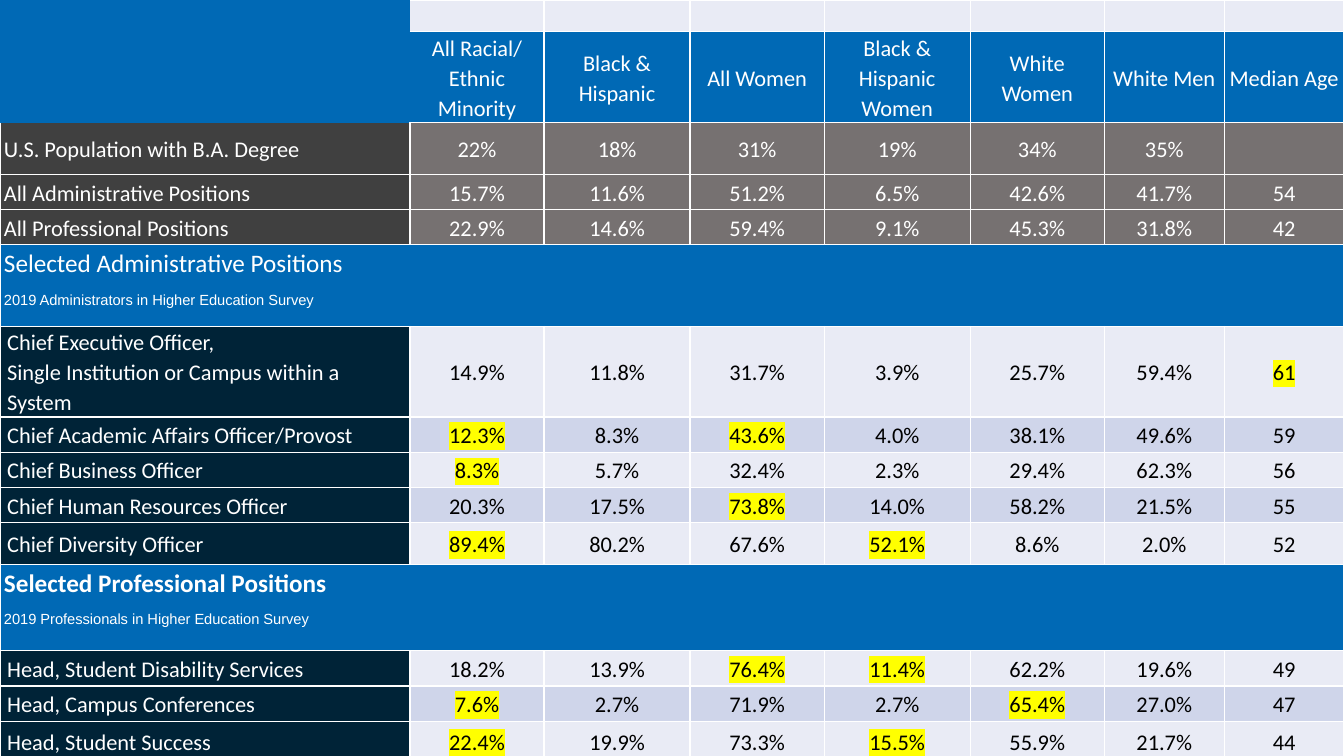
from lxml.etree import SubElement
from pptx import Presentation
from pptx.dml.color import RGBColor
from pptx.enum.text import MSO_ANCHOR, PP_ALIGN
from pptx.oxml.ns import qn
from pptx.util import Cm, Pt

WHITE, BLACK, BLUE, NAVY = "FFFFFF", "000000", "0069B5", "002337"
DARK, GREY, LIGHT, BAND, YELLOW = "404040", "767171", "E9EBF5", "CFD5EA", "FFFF00"

COLS = [10.33, 3.38, 3.68, 3.38, 3.68, 3.38, 3.02, 3.02]
HEADINGS = ["All Racial/ Ethnic Minority", "Black & Hispanic", "All Women",
            "Black & Hispanic Women", "White Women", "White Men", "Median Age"]

# A trailing * marks a highlighted value.
OVERALL = [
    (1.3, "U.S. Population with B.A. Degree", "22% 18% 31% 19% 34% 35%"),
    (0.89, "All Administrative Positions", "15.7% 11.6% 51.2% 6.5% 42.6% 41.7% 54"),
    (0.89, "All Professional Positions", "22.9% 14.6% 59.4% 9.1% 45.3% 31.8% 42"),
]
ADMINISTRATIVE = [
    (2.21, "Chief Executive Officer,\nSingle Institution or Campus within a System",
     "14.9% 11.8% 31.7% 3.9% 25.7% 59.4% 61*"),
    (0.89, "Chief Academic Affairs Officer/Provost",
     "12.3%* 8.3% 43.6%* 4.0% 38.1% 49.6% 59"),
    (0.89, "Chief Business Officer", "8.3%* 5.7% 32.4% 2.3% 29.4% 62.3% 56"),
    (0.89, "Chief Human Resources Officer", "20.3% 17.5% 73.8%* 14.0% 58.2% 21.5% 55"),
    (1.04, "Chief Diversity Officer", "89.4%* 80.2% 67.6% 52.1%* 8.6% 2.0% 52"),
]
PROFESSIONAL = [
    (0.89, "Head, Student Disability Services", "18.2% 13.9% 76.4%* 11.4%* 62.2% 19.6% 49"),
    (0.89, "Head, Campus Conferences", "7.6%* 2.7% 71.9% 2.7% 65.4%* 27.0% 47"),
    (1.02, "Head, Student Success", "22.4%* 19.9% 73.3% 15.5%* 55.9% 21.7% 44"),
]


def rgb(color):
    return RGBColor.from_string(color)


def write(p, text, size=16, font="Calibri", color=WHITE, bold=False,
          align=PP_ALIGN.LEFT, after=0, highlight=None):
    p.alignment, p.line_spacing, p.space_after = align, 1.1, Pt(after)
    r = p.add_run()
    r.text = text
    f = r.font
    f.size, f.name, f.bold = Pt(size), font, bold
    f.color.rgb = rgb(color)
    if highlight:
        mark = SubElement(r._r.rPr, qn("a:highlight"))
        SubElement(mark, qn("a:srgbClr"), val=highlight)
        r._r.rPr.find(qn("a:solidFill")).addnext(mark)


def style_cell(cell, fill, margins=(0, 0), bare=""):
    side, top = margins
    cell.margin_left = cell.margin_right = Cm(side)
    cell.margin_top, cell.margin_bottom = Cm(top), 0
    cell.vertical_anchor = MSO_ANCHOR.MIDDLE
    tc_pr = cell._tc.get_or_add_tcPr()
    for edge in "LRTB":
        ln = SubElement(tc_pr, qn(f"a:ln{edge}"), w=str(Pt(1)))
        if edge in bare:
            SubElement(ln, qn("a:noFill"))
        else:
            SubElement(SubElement(ln, qn("a:solidFill")), qn("a:srgbClr"), val=WHITE)
    cell.fill.solid()
    cell.fill.fore_color.rgb = rgb(fill)


def fill_header(tbl):
    tbl.rows[0].height, tbl.rows[1].height = Cm(0.79), Cm(2.24)
    corner = tbl.cell(0, 0)
    corner.merge(tbl.cell(1, 0))
    for i in (0, 1):
        style_cell(tbl.cell(i, 0), BLUE, bare="LRTB")
    for j, heading in enumerate(HEADINGS, 1):
        bare = "L" if j == 1 else ""
        style_cell(tbl.cell(0, j), LIGHT, bare=bare)
        style_cell(tbl.cell(1, j), BLUE, (0.1, 0.02), bare)
        write(tbl.cell(1, j).text_frame.paragraphs[0], heading,
              align=PP_ALIGN.CENTER, after=8)


def fill_section(tbl, i, height, title, survey, bold=False):
    tbl.rows[i].height = Cm(height)
    for j in range(len(COLS)):
        style_cell(tbl.cell(i, j), BLUE, (0.1, 0.02))
    cell = tbl.cell(i, 0)
    cell.merge(tbl.cell(i, len(COLS) - 1))
    cell.vertical_anchor = MSO_ANCHOR.TOP
    tf = cell.text_frame
    write(tf.paragraphs[0], title, size=18, bold=bold, after=8)
    write(tf.add_paragraph(), survey, size=10.5, font="Arial", after=8)


def fill_rows(tbl, first, rows, label_fill, fills, color, margins, after):
    for k, (height, label, values) in enumerate(rows):
        i = first + k
        tbl.rows[i].height = Cm(height)
        style_cell(tbl.cell(i, 0), label_fill, margins, "T" if i == 2 else "")
        tf = tbl.cell(i, 0).text_frame
        for n, line in enumerate(label.split("\n")):
            write(tf.add_paragraph() if n else tf.paragraphs[0], line, after=after)
        values = values.split()
        for j in range(1, len(COLS)):
            cell = tbl.cell(i, j)
            style_cell(cell, fills[k % len(fills)], margins)
            if j <= len(values):
                value = values[j - 1]
                write(cell.text_frame.paragraphs[0], value.rstrip("*"), color=color,
                      align=PP_ALIGN.CENTER, after=after,
                      highlight=YELLOW if value.endswith("*") else None)


def add_positions_table(s, left, top, width, height):
    n_rows = 4 + len(OVERALL) + len(ADMINISTRATIVE) + len(PROFESSIONAL)
    tbl = s.shapes.add_table(n_rows, len(COLS), left, top, width, height).table
    tbl.first_row = tbl.horz_banding = False
    for col, w in zip(tbl.columns, COLS):
        col.width = Cm(w)
    fill_header(tbl)
    fill_rows(tbl, 2, OVERALL, DARK, [GREY], WHITE, (0.1, 0.02), 8)
    i = 2 + len(OVERALL)
    fill_section(tbl, i, 2.06, "Selected Administrative Positions",
                 "2019 Administrators in Higher Education Survey")
    fill_rows(tbl, i + 1, ADMINISTRATIVE, NAVY, [LIGHT, BAND], BLACK, (0.18, 0), 0)
    i += 1 + len(ADMINISTRATIVE)
    fill_section(tbl, i, 2.18, "Selected Professional Positions",
                 "2019 Professionals in Higher Education Survey", bold=True)
    fill_rows(tbl, i + 1, PROFESSIONAL, NAVY, [LIGHT, BAND], BLACK, (0.18, 0), 0)


def main():
    prs = Presentation()
    prs.slide_width, prs.slide_height = Cm(33.87), Cm(19.05)
    s = prs.slides.add_slide(prs.slide_layouts[6])
    add_positions_table(s, 0, 0, prs.slide_width, prs.slide_height)
    prs.save("out.pptx")


if __name__ == "__main__":
    main()
